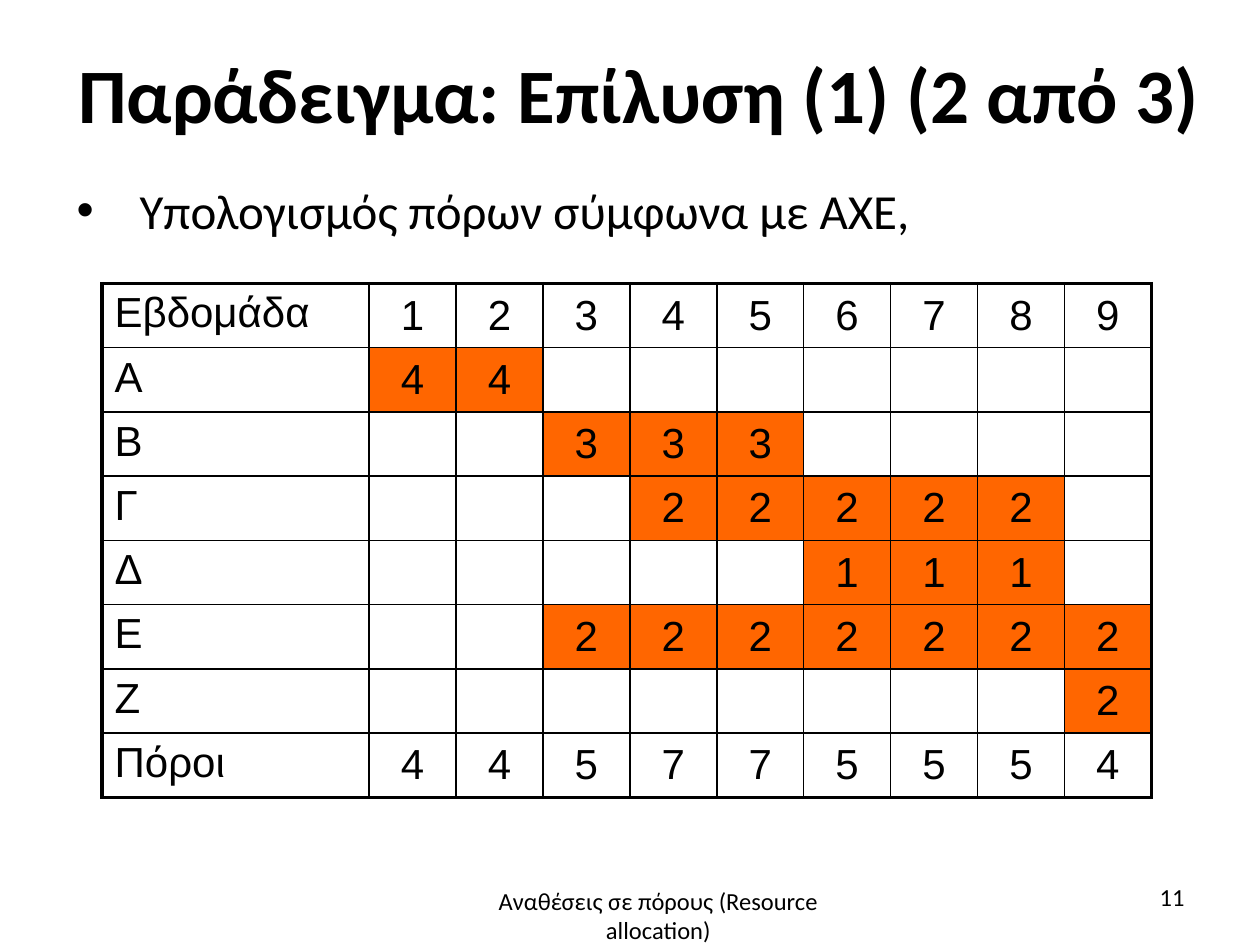
from lxml import etree
from pptx import Presentation
from pptx.dml.color import RGBColor
from pptx.enum import text as t
from pptx.oxml import ns
from pptx.util import Inches, Pt

COLORS = {"ink": "000000", "busy": "FF6600"}
WEEKS = range(1, 10)
# activity: (first week, last week, resources per week)
ACTIVITIES = {
    "Α": (1, 2, 4),
    "Β": (3, 5, 3),
    "Γ": (4, 8, 2),
    "Δ": (6, 8, 1),
    "Ε": (3, 9, 2),
    "Ζ": (9, 9, 2),
}
ROW_HEIGHT, LABEL_WIDTH, WEEK_WIDTH = 0.51, 2.12, 0.69
THIN, THICK = 1, 2.25


def format_text(frame, size, font="Calibri", bold=False, align=t.PP_ALIGN.LEFT):
    for paragraph in frame.paragraphs:
        paragraph.alignment = align
        for run in paragraph.runs:
            run.font.size = Pt(size)
            run.font.name = font
            run.font.bold = bold
            run.font.color.rgb = RGBColor.from_string(COLORS["ink"])


def add_title(slide, wording):
    title = slide.shapes.title
    title.left, title.top = Inches(0.51), Inches(0.05)
    title.width, title.height = Inches(9.13), Inches(1.42)
    frame = title.text_frame
    frame.text = wording
    frame.word_wrap = True
    frame.auto_size = t.MSO_AUTO_SIZE.NONE
    frame.vertical_anchor = t.MSO_ANCHOR.MIDDLE
    frame.margin_left = frame.margin_right = frame.margin_bottom = 0
    frame.margin_top = Inches(0.01)
    frame.paragraphs[0].line_spacing = 0.98
    format_text(frame, 44, bold=True, align=t.PP_ALIGN.CENTER)


def add_text(slide, wording, left, top, width, height, size, align=t.PP_ALIGN.LEFT):
    box = slide.shapes.add_textbox(
        Inches(left), Inches(top), Inches(width), Inches(height))
    frame = box.text_frame
    frame.word_wrap = True
    frame.text = wording
    format_text(frame, size, align=align)
    return frame


def add_bullet(paragraph, indent):
    properties = paragraph._p.get_or_add_pPr()
    properties.set("marL", str(Inches(indent)))
    properties.set("indent", str(-Inches(indent)))
    font = etree.SubElement(properties, ns.qn("a:buFont"))
    font.set("typeface", "Arial")
    etree.SubElement(properties, ns.qn("a:buChar")).set("char", "•")


def set_borders(cell, widths):
    """Draw the left, right, top and bottom edges with widths in points."""
    properties = cell._tc.get_or_add_tcPr()
    for side, width in zip("LRTB", widths):
        line = etree.SubElement(properties, ns.qn(f"a:ln{side}"))
        line.set("w", str(Pt(width)))
        fill = etree.SubElement(line, ns.qn("a:solidFill"))
        etree.SubElement(fill, ns.qn("a:srgbClr")).set("val", COLORS["ink"])


def schedule_rows():
    """Header, one row per activity, and the weekly totals."""
    loads = [[amount if first <= week <= last else 0 for week in WEEKS]
             for first, last, amount in ACTIVITIES.values()]
    totals = [sum(week_loads) for week_loads in zip(*loads)]
    return [["Εβδομάδα", *WEEKS],
            *([name, *load] for name, load in zip(ACTIVITIES, loads)),
            ["Πόροι", *totals]]


def add_schedule(slide, left, top):
    rows = schedule_rows()
    last_row, last_column = len(rows) - 1, len(WEEKS)
    table = slide.shapes.add_table(
        len(rows), last_column + 1, Inches(left), Inches(top),
        Inches(LABEL_WIDTH + last_column * WEEK_WIDTH),
        Inches(len(rows) * ROW_HEIGHT)).table
    table.first_row = table.horz_banding = False
    for c, column in enumerate(table.columns):
        column.width = Inches(WEEK_WIDTH if c else LABEL_WIDTH)
    for r, values in enumerate(rows):
        table.rows[r].height = Inches(ROW_HEIGHT)
        for c, value in enumerate(values):
            cell = table.cell(r, c)
            outer_edges = (c == 0, c == last_column, r == 0, r == last_row)
            set_borders(cell, [THICK if outer else THIN for outer in outer_edges])
            if c and value and 0 < r < last_row:
                cell.fill.solid()
                cell.fill.fore_color.rgb = RGBColor.from_string(COLORS["busy"])
            else:
                cell.fill.background()
            if value:
                cell.text_frame.text = str(value)
            if c:
                cell.vertical_anchor = t.MSO_ANCHOR.MIDDLE
            format_text(cell.text_frame, 24, "Arial",
                        align=t.PP_ALIGN.CENTER if c else t.PP_ALIGN.LEFT)


def main():
    deck = Presentation()
    deck.slide_width, deck.slide_height = Inches(10), Inches(7.5)
    slide = deck.slides.add_slide(deck.slide_layouts[5])
    add_title(slide, "Παράδειγμα: Επίλυση (1) (2 από 3)")
    intro = add_text(slide, "Υπολογισμός πόρων σύμφωνα με ΑΧΕ,",
                     0.51, 1.38, 8.99, 0.57, 28)
    add_bullet(intro.paragraphs[0], 0.5)
    add_schedule(slide, 0.81, 2.25)
    add_text(slide, "Αναθέσεις σε πόρους (Resource allocation)",
             3.48, 6.98, 3.49, 0.55, 14, t.PP_ALIGN.CENTER)
    add_text(slide, "11", 7.17, 6.95, 2.33, 0.4, 14, t.PP_ALIGN.RIGHT)
    deck.save("out.pptx")


if __name__ == "__main__":
    main()
